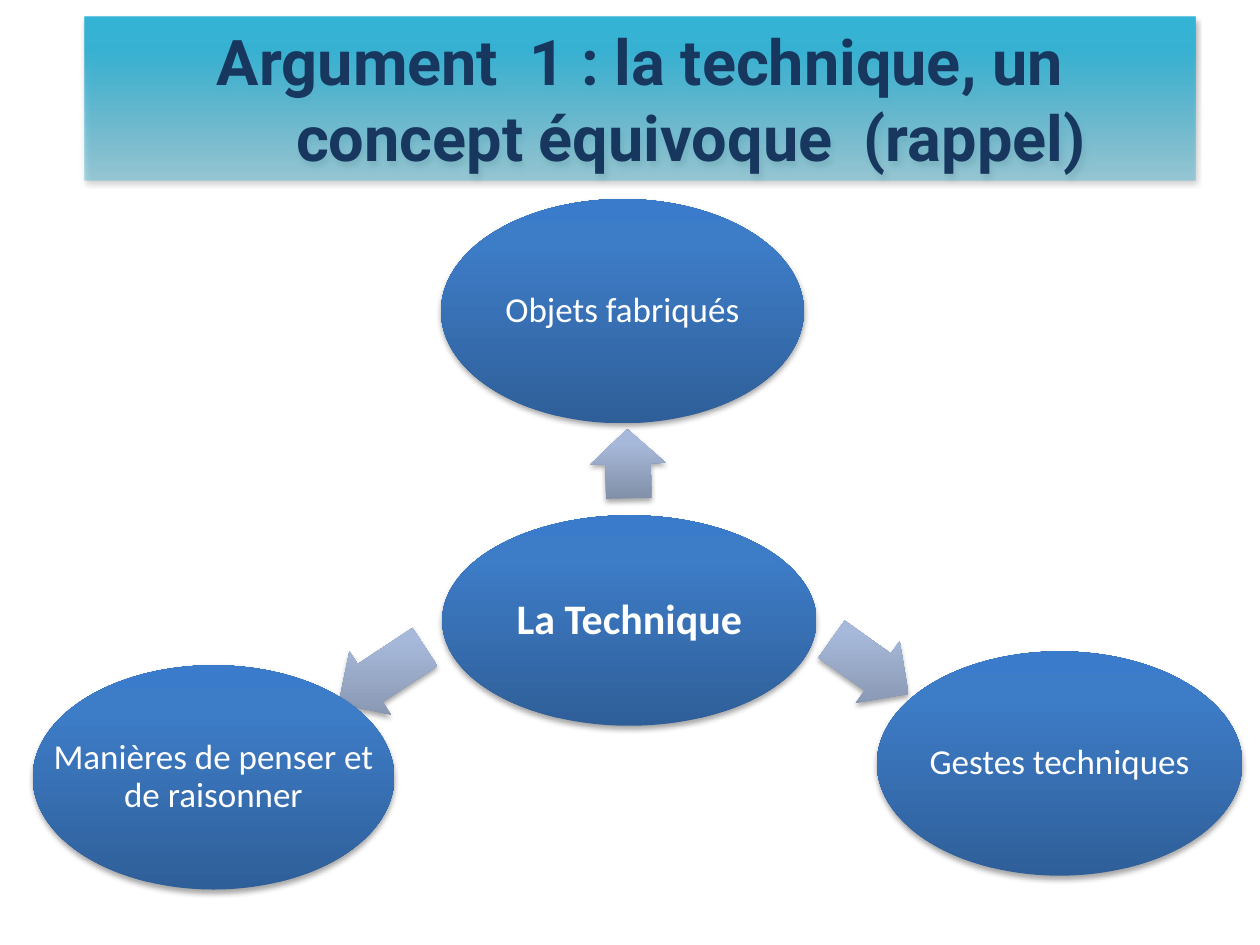
import pptx
import pptx.util
import pptx.oxml
import pptx.oxml.ns
import pptx.dml.color
import pptx.enum.shapes
import pptx.enum.text
import lxml.etree

Inches, Pt = pptx.util.Inches, pptx.util.Pt
RGBColor = pptx.dml.color.RGBColor
SHAPE = pptx.enum.shapes.MSO_SHAPE
ALIGN = pptx.enum.text.PP_ALIGN
ANCHOR = pptx.enum.text.MSO_ANCHOR
qn = pptx.oxml.ns.qn

WHITE = RGBColor(0xFF, 0xFF, 0xFF)
NAVY = RGBColor(0x17, 0x37, 0x5E)
BLACK = RGBColor(0, 0, 0)


def stops(*colors):
    return list(zip((0, 80, 100), map(RGBColor.from_string, colors)))


BLUE = stops("2F5F99", "3D7CC7", "3A7CCB")
GREY = stops("818FA8", "A7B9DA", "A7BADC")
TEAL = stops("64BED6", "37B1D2", "34B4D6")

TITLE_BOX = (0.67, 0.13, 8.82, 1.3)
CENTER = ("La Technique", (3.51, 4.09, 2.97, 1.67))
# Each branch: label, ellipse box, arrow box, arrow rotation
BRANCHES = [
    ("Objets fabriqués", (3.5, 1.58, 2.88, 1.78), (4.71, 3.38, 0.55, 0.6), 268.7),
    ("Gestes techniques", (6.96, 5.17, 2.9, 1.78), (6.53, 4.99, 0.75, 0.6), 35.4),
    ("Manières de penser et de raisonner", (0.26, 5.28, 2.87, 1.78),
     (2.62, 5.06, 0.82, 0.6), 146.6),
]


def add_color(parent, color, alpha=100):
    clr = lxml.etree.SubElement(parent, qn("a:srgbClr"), val=str(color))
    if alpha < 100:
        lxml.etree.SubElement(clr, qn("a:alpha"), val=str(alpha * 1000))


def style(sp, gradient, first_alpha=100):
    """Give a vertical gradient (first stop at the bottom), no line and a soft shadow."""
    sp.fill.gradient()
    sp.fill.gradient_angle = 90
    grad = sp._element.spPr.find(qn("a:gradFill"))
    grad.set("rotWithShape", "0")
    gs_list = grad.find(qn("a:gsLst"))
    for gs in list(gs_list):
        gs_list.remove(gs)
    for pos, color in gradient:
        gs = lxml.etree.SubElement(gs_list, qn("a:gs"), pos=str(pos * 1000))
        add_color(gs, color, 100 if pos else first_alpha)
    sp.line.fill.background()
    sp.shadow.inherit = False
    effects = sp._element.spPr.find(qn("a:effectLst"))
    shadow = lxml.etree.SubElement(
        effects, qn("a:outerShdw"), blurRad=str(Pt(3.1)), dist=str(Pt(1.8)),
        dir="5400000", rotWithShape="0")
    add_color(shadow, BLACK, 35)


def set_text(tf, text, font, size, color, bold=False):
    tf.text = text
    tf.word_wrap = True
    p = tf.paragraphs[0]
    p.alignment = ALIGN.CENTER
    f = p.runs[0].font
    f.name, f.size, f.bold = font, Pt(size), bold
    f.color.rgb = color
    return p


def add_title(s, box):
    sp = s.shapes.title
    sp.left, sp.top, sp.width, sp.height = map(Inches, box)
    style(sp, TEAL, first_alpha=52)
    tf = sp.text_frame
    p = set_text(tf, "Argument  1 : la technique, un concept équivoque  (rappel)",
                 "Roboto", 36, NAVY, True)
    tf.auto_size = pptx.enum.text.MSO_AUTO_SIZE.NONE
    tf.vertical_anchor = ANCHOR.TOP
    hanging = Inches(0.81)
    p._p.get_or_add_pPr().set("marL", str(hanging))
    p._p.get_or_add_pPr().set("indent", str(-hanging))


def add_node(s, text, box, size=20, bold=False):
    """Add an ellipse whose label may use the full width of its box."""
    box = [Inches(v) for v in box]
    style(s.shapes.add_shape(SHAPE.OVAL, *box), BLUE)
    tf = s.shapes.add_textbox(*box).text_frame
    tf.margin_left = tf.margin_right = tf.margin_top = tf.margin_bottom = Inches(0.03)
    tf.vertical_anchor = ANCHOR.MIDDLE
    p = set_text(tf, text, "Calibri", size, WHITE, bold)
    p.line_spacing = 0.9


def add_arrow(s, box, rotation):
    sp = s.shapes.add_shape(SHAPE.RIGHT_ARROW, *map(Inches, box))
    sp.adjustments[0], sp.adjustments[1] = 0.6, 0.5
    sp.rotation = rotation
    style(sp, GREY)


def add_diagram(s):
    add_node(s, *CENTER, size=24, bold=True)
    for text, box, arrow_box, rotation in BRANCHES:
        add_arrow(s, arrow_box, rotation)
        add_node(s, text, box)


def main():
    prs = pptx.Presentation()
    prs.slide_width, prs.slide_height = Inches(10), Inches(7.5)
    s = prs.slides.add_slide(prs.slide_layouts[5])
    add_title(s, TITLE_BOX)
    add_diagram(s)
    prs.save("out.pptx")


if __name__ == "__main__":
    main()
